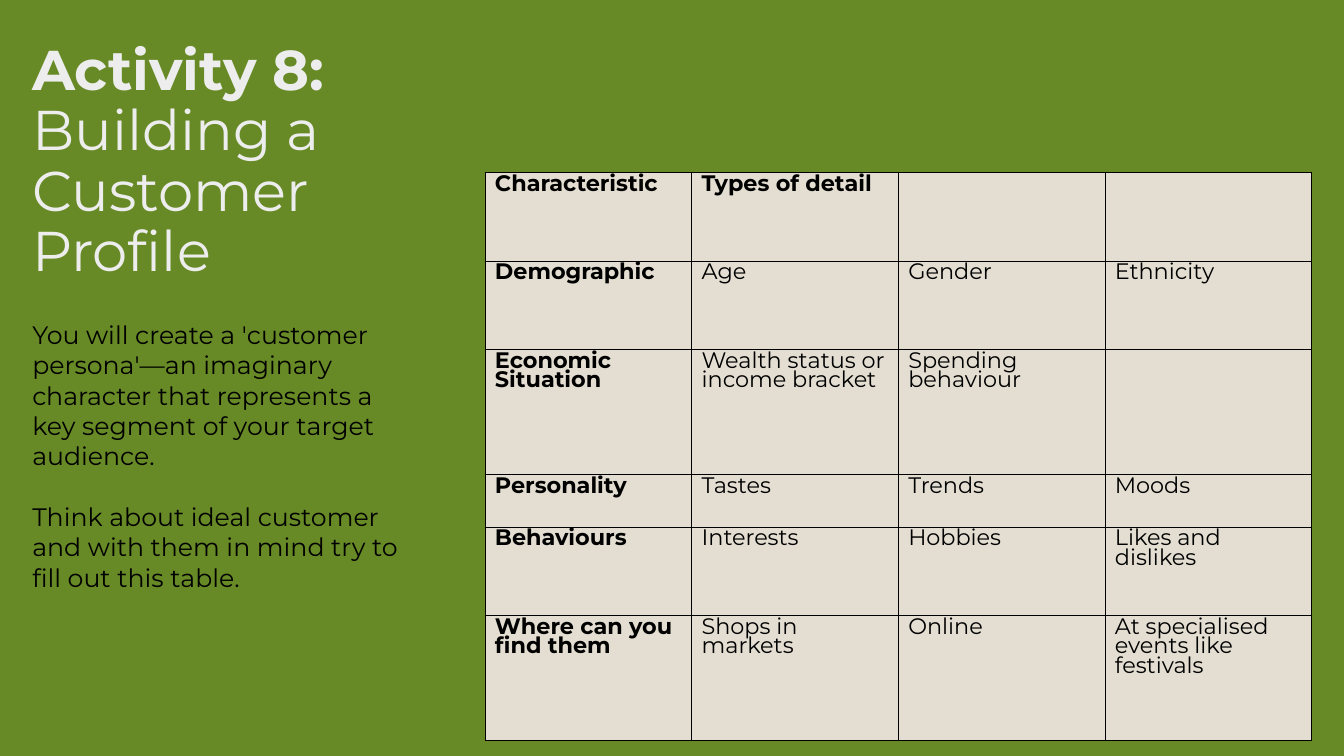
from copy import deepcopy

from lxml import etree
from pptx import Presentation, util as u
from pptx.dml.color import RGBColor
from pptx.enum import text as t
from pptx.oxml.ns import qn

WIDE, HIGH = u.Inches(13.33), u.Inches(7.5)
LEFT = 1.65  # percent of the slide's width
INK = "000000"


def box(x, y, w, h):
    """Turn percentages of the slide into left, top, width and height."""
    return [int(p * side / 100) for p, side in zip((x, y, w, h), (WIDE, HIGH) * 2)]


def write(para, words, size, color, bold=False):
    run = para.add_run()
    run.text = words
    run.font.name = "Montserrat"
    run.font.size = u.Pt(size)
    run.font.bold = bold
    run.font.color.rgb = RGBColor.from_string(color)
    return run


deck = Presentation()
deck.slide_width, deck.slide_height = WIDE, HIGH
slide = deck.slides.add_slide(deck.slide_layouts[1])
slide.background.fill.solid()
slide.background.fill.fore_color.rgb = RGBColor.from_string("678A26")

# Title: one paragraph with line breaks
title, body = slide.placeholders
title.left, title.top, title.width, title.height = box(LEFT, 14.8, 71.87, 13.47)
frame = title.text_frame
frame.auto_size = t.MSO_AUTO_SIZE.NONE
frame.vertical_anchor = t.MSO_ANCHOR.MIDDLE
para = frame.paragraphs[0]
para.alignment = t.PP_ALIGN.LEFT
para.line_spacing = 0.9
lines = ["Activity 8:", "Building a", "Customer", "Profile"]
for i, line in enumerate(lines):
    run = write(para, line, 40, "EDEDED", bold=i == 0)
    if line != lines[-1]:
        para.add_line_break()
        para._p[-1].append(deepcopy(run._r.rPr))  # the break keeps the run's size

# Body: two plain paragraphs without bullets
body.left, body.top, body.width, body.height = box(LEFT, 41.6, 29.11, 37.73)
frame = body.text_frame
frame.auto_size = t.MSO_AUTO_SIZE.NONE
tasks = [
    "You will create a 'customer persona'—an imaginary character that "
    "represents a key segment of your target audience.",
    "Think about ideal customer and with them in mind try to fill out this table.",
]
for i, task in enumerate(tasks):
    para = frame.paragraphs[0] if i == 0 else frame.add_paragraph()
    para.space_before = u.Pt(22 * i)
    props = para._p.get_or_add_pPr()
    props.set("marL", "0")
    props.set("indent", "0")
    etree.SubElement(props, qn("a:buNone"))
    write(para, task, 18, INK)

# Table: each row has its height, as a percentage, and its words
rows = [
    (11.73, ["Characteristic", "Types of detail", "", ""]),
    (11.73, ["Demographic", "Age", "Gender", "Ethnicity"]),
    (16.53, ["Economic Situation", "Wealth status or income bracket",
             "Spending behaviour", ""]),
    (6.93, ["Personality", "Tastes", "Trends", "Moods"]),
    (11.73, ["Behaviours", "Interests", "Hobbies", "Likes and dislikes"]),
    (16.53, ["Where can you find them", "Shops in markets", "Online",
             "At specialised events like festivals"]),
]
total = sum(tall for tall, _ in rows)
table = slide.shapes.add_table(len(rows), 4, *box(36.08, 22.8, 61.51, total)).table
table.first_row = table.horz_banding = False
for r, (tall, words) in enumerate(rows):
    table.rows[r].height = int(HIGH * tall / 100)
    for c, word in enumerate(words):
        cell = table.cell(r, c)
        for side in ("lnL", "lnR", "lnT", "lnB"):
            edge = etree.SubElement(cell._tc.get_or_add_tcPr(), qn("a:" + side),
                                    w=str(u.Pt(0.6)))
            fill = etree.SubElement(edge, qn("a:solidFill"))
            etree.SubElement(fill, qn("a:srgbClr"), val=INK)
        cell.fill.solid()
        cell.fill.fore_color.rgb = RGBColor.from_string("E3DED1")
        if word:
            para = cell.text_frame.paragraphs[0]
            para.line_spacing = u.Pt(13.8)
            write(para, word, 16, INK, bold=r == 0 or c == 0)

deck.save("out.pptx")
